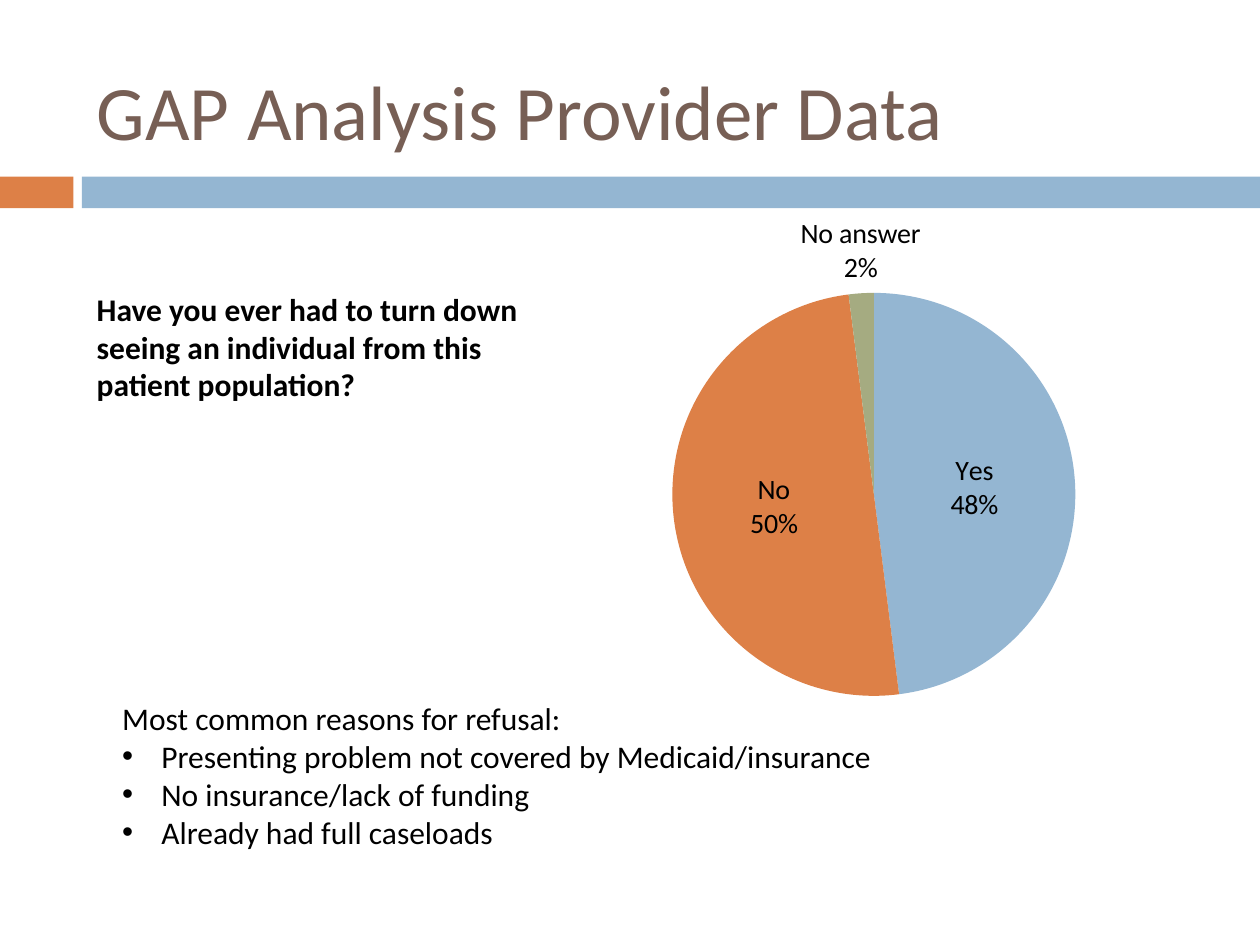
from lxml import etree
from pptx import Presentation
from pptx import util as u
from pptx.chart.data import CategoryChartData
from pptx.dml.color import RGBColor
from pptx.enum import chart as ch, shapes, text
from pptx.oxml.ns import qn

FONT = "Calibri"
BLUE, RUST, SAGE = "94B6D2", "DD8047", "A5AB81"
BROWN, BLACK = "775F55", "000000"
SHARES = {"Yes": (48, BLUE), "No": (50, RUST), "No answer": (2, SAGE)}
REASONS = [
    "Presenting problem not covered by Medicaid/insurance",
    "No insurance/lack of funding",
    "Already had full caseloads",
]


def tint(target, color):
    """Give a fill a solid colour."""
    target.solid()
    target.fore_color.rgb = RGBColor.from_string(color)


def style(font, size, color=BLACK, bold=False):
    font.name, font.size, font.bold = FONT, u.Pt(size), bold
    font.color.rgb = RGBColor.from_string(color)


def place(shape, left, top, width, height):
    shape.left, shape.top = u.Cm(left), u.Cm(top)
    shape.width, shape.height = u.Cm(width), u.Cm(height)


def mark(para, bullet):
    """Set the bullet and the hanging indent, or clear both."""
    props = para._p.get_or_add_pPr()
    indent = u.Cm(0.79) if bullet else 0
    props.set("marL", str(indent))
    props.set("indent", str(-indent))
    if bullet:
        etree.SubElement(props, qn("a:buFont")).set("typeface", "Arial")
        etree.SubElement(props, qn("a:buChar")).set("char", "•")
    else:
        etree.SubElement(props, qn("a:buNone"))


def write(shape, lines, size=18, color=BLACK, bold=False, bullets=False,
          anchor=text.MSO_ANCHOR.TOP):
    """Fill a shape with lines; with bullets, all but the first get one."""
    frame = shape.text_frame
    frame.word_wrap = True
    frame.auto_size = text.MSO_AUTO_SIZE.NONE
    frame.vertical_anchor = anchor
    frame.text = "\n".join(lines)
    for i, para in enumerate(frame.paragraphs):
        para.alignment = text.PP_ALIGN.LEFT
        para.space_before = u.Pt(0)
        mark(para, bullets and i > 0)
        style(para.runs[0].font, size, color, bold)


def add_bar(slide, left, width, color):
    bar = slide.shapes.add_shape(
        shapes.MSO_SHAPE.RECTANGLE, u.Cm(left), u.Cm(3.56), u.Cm(width), u.Cm(0.64))
    bar.shadow.inherit = False
    tint(bar.fill, color)
    bar.line.fill.background()


def set_area(chart, **box):
    """Fix the inner plot area as shares of the chart's size."""
    area = chart._chartSpace.chart.plotArea
    for old in area.findall(qn("c:layout")):
        area.remove(old)
    layout = etree.Element(qn("c:layout"))
    area.insert(0, layout)
    manual = etree.SubElement(layout, qn("c:manualLayout"))
    parts = {"layoutTarget": "inner", "xMode": "edge", "yMode": "edge", **box}
    for name, value in parts.items():
        etree.SubElement(manual, qn("c:" + name)).set("val", str(value))


def set_labels(series):
    """Show category over percent, with the small last slice labelled outside."""
    labels = series.data_labels
    labels.position = ch.XL_LABEL_POSITION.CENTER
    style(labels.font, 16)
    last = series.points[len(SHARES) - 1].data_label
    style(last.font, 16)
    last.position = ch.XL_LABEL_POSITION.OUTSIDE_END
    root = labels._element
    for name, on in (("showVal", "0"), ("showCatName", "1"), ("showPercent", "1")):
        for flag in root.iter(qn("c:" + name)):
            flag.set("val", on)
    for flag in list(root.iter(qn("c:showBubbleSize"))):
        gap = etree.Element(qn("c:separator"))
        gap.text = "\n"
        flag.addnext(gap)


def add_pie(slide):
    data = CategoryChartData()
    data.categories = list(SHARES)
    data.add_series("Series 1", [value for value, _ in SHARES.values()])
    chart = slide.shapes.add_chart(
        ch.XL_CHART_TYPE.PIE, u.Cm(10.8), u.Cm(4.01), u.Cm(13.77), u.Cm(10.36),
        data).chart
    chart.has_legend = chart.has_title = False
    style(chart.font, 10)
    chart.plots[0].vary_by_categories = True
    series = chart.plots[0].series[0]
    for i, (_, color) in enumerate(SHARES.values()):
        tint(series.points[i].format.fill, color)
    set_labels(series)
    set_area(chart, x=0.2, y=0.18, w=0.59, h=0.79)


def main():
    deck = Presentation()
    deck.slide_width, deck.slide_height = u.Cm(25.4), u.Cm(19.05)
    slide = deck.slides.add_slide(deck.slide_layouts[1])
    title, body = slide.placeholders

    add_bar(slide, 0, 1.48, RUST)
    add_bar(slide, 1.65, 23.75, BLUE)

    place(title, 1.7, 0.84, 22.66, 2.74)
    write(title, ["GAP Analysis Provider Data"], size=44, color=BROWN,
          anchor=text.MSO_ANCHOR.MIDDLE)

    ask = slide.shapes.add_textbox(u.Cm(1.7), u.Cm(5.72), u.Cm(9.1), u.Cm(2.57))
    write(ask, ["Have you ever had to turn down seeing an individual "
                "from this patient population?"], bold=True)

    place(body, 2.21, 13.97, 17.98, 3.33)
    write(body, ["Most common reasons for refusal:", *REASONS], bullets=True)

    add_pie(slide)
    deck.save("out.pptx")


if __name__ == "__main__":
    main()
